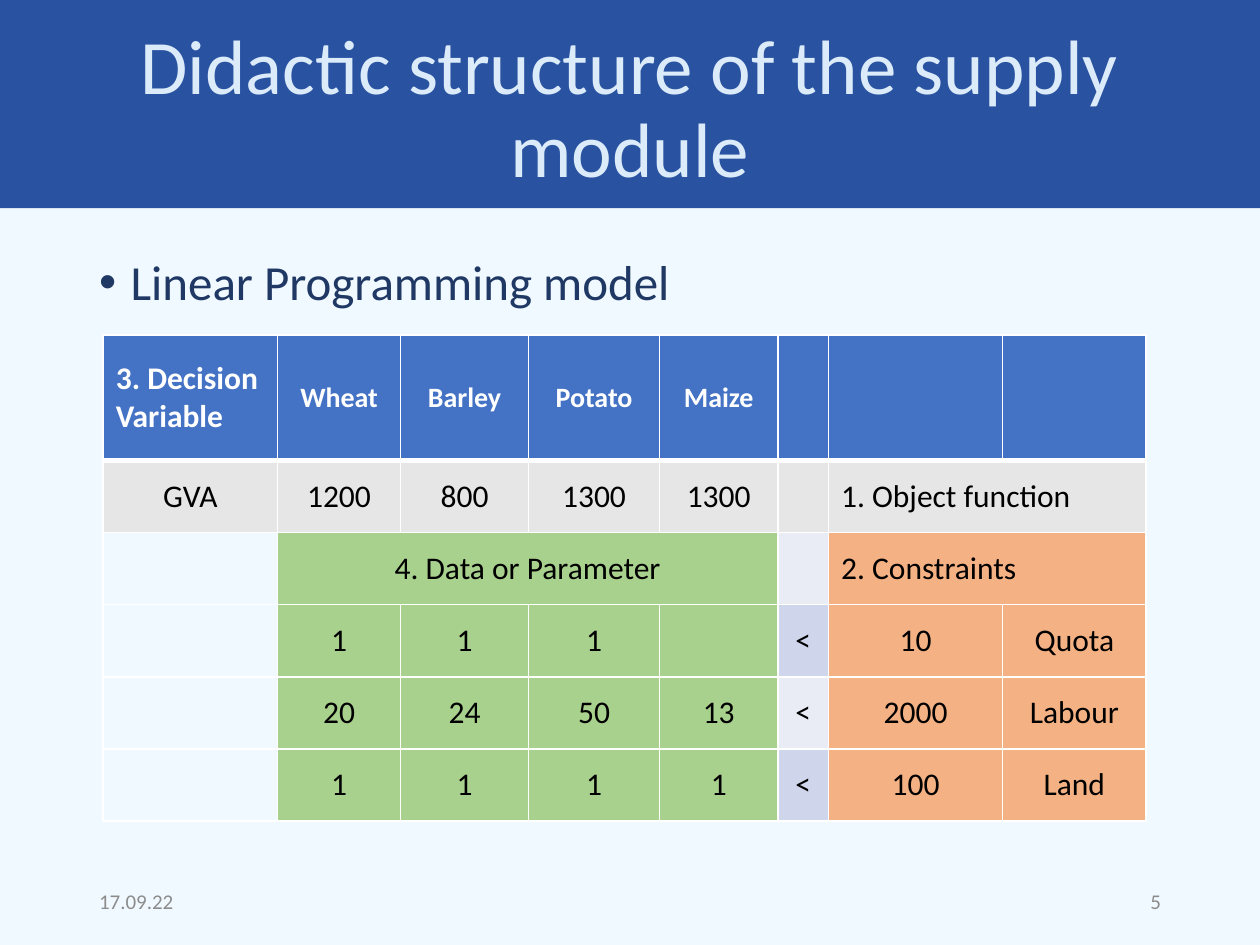
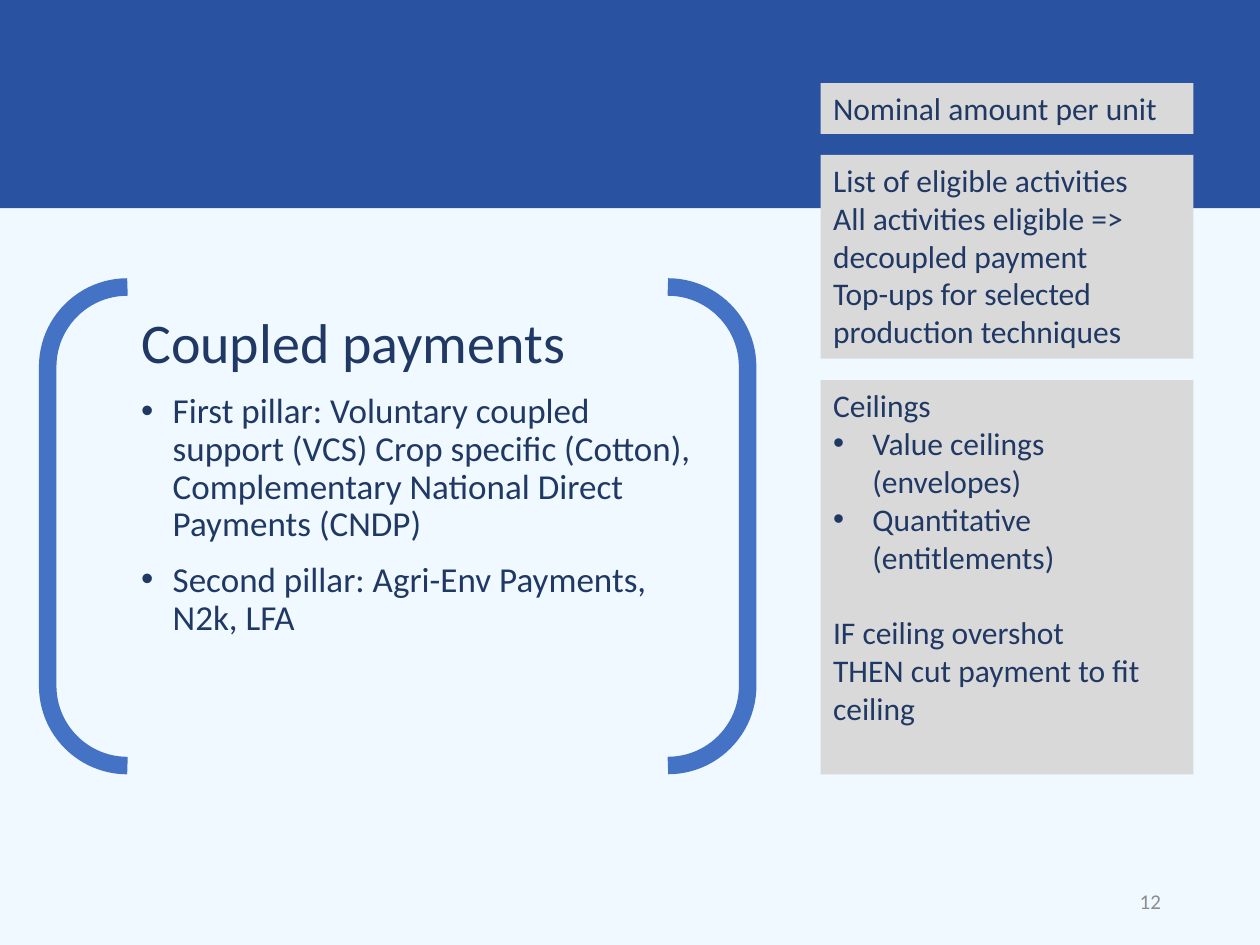
from dataclasses import dataclass
from typing import Any, Optional

import lxml.etree
import pptx
import pptx.dml.color
import pptx.enum.shapes
import pptx.enum.text
import pptx.oxml.ns
import pptx.util

Pt = pptx.util.Pt
RGBColor = pptx.dml.color.RGBColor
Align = pptx.enum.text.PP_ALIGN
Anchor = pptx.enum.text.MSO_ANCHOR
Preset = pptx.enum.shapes.MSO_SHAPE

FONT = "Calibri"
PAGE_COLOR = RGBColor(0xF0, 0xF9, 0xFF)
BAND_COLOR = RGBColor(0x29, 0x53, 0xA1)
TITLE_COLOR = RGBColor(0xDC, 0xEB, 0xFA)
TEXT_COLOR = RGBColor(0x20, 0x38, 0x64)
FOOTER_COLOR = RGBColor(0x8C, 0x8C, 0x8C)
BLUE = RGBColor(0x44, 0x72, 0xC4)
WHITE = RGBColor(0xFF, 0xFF, 0xFF)
BLACK = RGBColor(0x00, 0x00, 0x00)
PANEL_GRAY = RGBColor(0xD9, 0xD9, 0xD9)
ROW_GRAY = RGBColor(0xE7, 0xE6, 0xE6)
GREEN = RGBColor(0xA9, 0xD1, 0x8E)
ORANGE = RGBColor(0xF4, 0xB1, 0x83)
SIGN_COLORS = (RGBColor(0xE9, 0xEB, 0xF5), RGBColor(0xCF, 0xD5, 0xEA))

LIST_FORMAT = {"line_spacing": 0.9, "space_before": Pt(10)}


@dataclass(frozen=True)
class Box:
    left: float
    top: float
    width: float
    height: float

    def lengths(self) -> tuple:
        return tuple(Pt(side) for side in (self.left, self.top, self.width, self.height))


@dataclass(frozen=True)
class Line:
    text: str
    size: float = 18
    color: RGBColor = TEXT_COLOR
    bold: bool = False
    indent: float = 0
    layout: Optional[dict] = None


@dataclass(frozen=True)
class Panel:
    box: Box
    lines: tuple


BAND_BOX = Box(0, 0, 720, 119)
TITLE_BOX = Box(49.5, 11, 621, 104.5)
BODY_BOX = Box(49.5, 144, 621, 342.5)
DATE_BOX = Box(49.5, 500.5, 162, 29)
NUMBER_BOX = Box(508.5, 500.5, 162, 29)
PAYMENTS_BOX = Box(73.5, 176.5, 330, 236)
BRACKET_BOX = Box(27.25, 164, 400, 273.5)

TABLE_LEFT, TABLE_TOP = 59, 191.5
COLUMN_WIDTHS = (99.5, 70.5, 73, 75, 67.5, 29, 99.5, 82)
ROW_HEIGHTS = (71.5,) + (41.25,) * 5
MODEL_ROWS = (
    ("3. Decision Variable", "Wheat", "Barley", "Potato", "Maize", "", "", ""),
    ("GVA", "1200", "800", "1300", "1300", "", "1. Object function", ""),
    ("", "4. Data or Parameter", "", "", "", "", "2. Constraints", ""),
    ("", "1", "1", "1", "", "<", "10", "Quota"),
    ("", "20", "24", "50", "13", "<", "2000", "Labour"),
    ("", "1", "1", "1", "1", "<", "100", "Land"),
)
MERGES = (((1, 6), (1, 7)), ((2, 1), (2, 4)), ((2, 6), (2, 7)))
LEFT_LABELS = {(0, 0), (1, 6), (2, 6)}

PANELS = (
    Panel(Box(469, 88.5, 213, 116.5), (
        Line("List of eligible activities"),
        Line("All activities eligible => decoupled payment"),
        Line("Top-ups for selected production techniques"),
    )),
    Panel(Box(469, 47.5, 213, 29), (Line("Nominal amount per unit"),)),
    Panel(Box(469, 217.25, 213, 225.25), (
        Line("Ceilings"),
        Line("Value ceilings (envelopes)", indent=22.5),
        Line("Quantitative (entitlements)", indent=22.5),
        Line("IF ceiling overshot", layout={"space_before": Pt(21.6)}),
        Line("THEN cut payment to fit ceiling"),
    )),
)


def apply_format(target: Any, values: dict) -> None:
    for name, value in values.items():
        setattr(target, name, value)


def place(shape: Any, box: Box) -> None:
    apply_format(shape, dict(zip(("left", "top", "width", "height"), box.lengths())))


def set_bullet(para: Any, indent: float) -> None:
    properties = para._p.get_or_add_pPr()
    properties.set("marL", str(Pt(indent)))
    properties.set("indent", str(-Pt(indent)))
    qualified = pptx.oxml.ns.qn
    if indent:
        lxml.etree.SubElement(properties, qualified("a:buFont"), typeface="Arial")
        lxml.etree.SubElement(properties, qualified("a:buChar"), char="•")
    else:
        lxml.etree.SubElement(properties, qualified("a:buNone"))


def write_lines(frame: Any, lines: tuple, align: Any = Align.LEFT) -> None:
    for index, line in enumerate(lines):
        para = frame.add_paragraph() if index else frame.paragraphs[0]
        apply_format(para, {"alignment": align, **(line.layout or {})})
        set_bullet(para, line.indent)
        span = para.add_run()
        span.text = line.text
        apply_format(span.font, {"name": FONT, "size": Pt(line.size), "bold": line.bold})
        span.font.color.rgb = line.color


def fill_frame(shape: Any, lines: tuple, anchor: Any, align: Any = Align.LEFT) -> None:
    apply_format(shape.text_frame, {
        "word_wrap": True,
        "auto_size": pptx.enum.text.MSO_AUTO_SIZE.NONE,
        "vertical_anchor": anchor,
    })
    write_lines(shape.text_frame, lines, align)


def add_preset(page: Any, preset: Any, box: Box, fill: Optional[RGBColor]) -> Any:
    shape = page.shapes.add_shape(preset, *box.lengths())
    shape.shadow.inherit = False
    if fill is None:
        shape.fill.background()
    else:
        shape.fill.solid()
        shape.fill.fore_color.rgb = fill
        shape.line.fill.background()
    return shape


def add_footer(page: Any, box: Box, text: str, align: Any) -> None:
    footer = page.shapes.add_textbox(*box.lengths())
    fill_frame(footer, (Line(text, 12, FOOTER_COLOR),), Anchor.MIDDLE, align)


def add_page(deck: Any, number: int, body_box: Box, body_lines: tuple) -> Any:
    page = deck.slides.add_slide(deck.slide_layouts[1])
    band = add_preset(page, Preset.RECTANGLE, BAND_BOX, BAND_COLOR).element
    band.getparent().insert(2, band)
    body = page.placeholders[1]
    place(body, body_box)
    fill_frame(body, body_lines, Anchor.TOP)
    add_footer(page, NUMBER_BOX, str(number), Align.RIGHT)
    return page


def cell_color(row: int, column: int) -> Optional[RGBColor]:
    if row == 0:
        return BLUE
    if row == 1:
        return ROW_GRAY
    if column == 0:
        return None
    if column == 5:
        return SIGN_COLORS[row % 2]
    return GREEN if column < 5 else ORANGE


def set_borders(cell: Any, row: int) -> None:
    widths = {"lnL": 1, "lnR": 1, "lnT": 3 if row == 1 else 1, "lnB": 3 if row == 0 else 1}
    qualified = pptx.oxml.ns.qn
    properties = cell._tc.get_or_add_tcPr()
    for index, (side, width) in enumerate(widths.items()):
        border = lxml.etree.Element(qualified(f"a:{side}"), w=str(Pt(width)))
        fill = lxml.etree.SubElement(border, qualified("a:solidFill"))
        lxml.etree.SubElement(fill, qualified("a:srgbClr"), val=str(WHITE))
        properties.insert(index, border)


def format_cell(cell: Any, row: int, column: int, text: str) -> None:
    color = cell_color(row, column)
    if color is None:
        cell.fill.background()
    else:
        cell.fill.solid()
        cell.fill.fore_color.rgb = color
    set_borders(cell, row)
    cell.vertical_anchor = Anchor.MIDDLE
    if text:
        header = row == 0
        size = 16 if header and column else 18
        align = Align.LEFT if (row, column) in LEFT_LABELS else Align.CENTER
        line = Line(text, size, WHITE if header else BLACK, header)
        write_lines(cell.text_frame, (line,), align)


def add_model_table(page: Any) -> None:
    box = Box(TABLE_LEFT, TABLE_TOP, sum(COLUMN_WIDTHS), sum(ROW_HEIGHTS))
    table = page.shapes.add_table(len(ROW_HEIGHTS), len(COLUMN_WIDTHS), *box.lengths()).table
    for column, width in zip(table.columns, COLUMN_WIDTHS):
        column.width = Pt(width)
    for row, height in zip(table.rows, ROW_HEIGHTS):
        row.height = Pt(height)
    for first, last in MERGES:
        table.cell(*first).merge(table.cell(*last))
    for row, texts in enumerate(MODEL_ROWS):
        for column, text in enumerate(texts):
            format_cell(table.cell(row, column), row, column, text)


def build_model_page(deck: Any) -> None:
    heading = Line("Linear Programming model", 28, indent=18, layout=LIST_FORMAT)
    page = add_page(deck, 5, BODY_BOX, (heading,))
    title = page.shapes.title
    place(title, TITLE_BOX)
    line = Line("Didactic structure of the supply module", 44, TITLE_COLOR,
                layout={"line_spacing": 0.9})
    fill_frame(title, (line,), Anchor.MIDDLE, Align.CENTER)
    add_footer(page, DATE_BOX, "17.09.22", Align.LEFT)
    add_model_table(page)


def build_payments_page(deck: Any) -> None:
    page = add_page(deck, 12, PAYMENTS_BOX, (
        Line("Coupled payments", 32, layout=LIST_FORMAT),
        Line("First pillar: Voluntary coupled support (VCS) Crop specific (Cotton), "
             "Complementary National Direct Payments (CNDP)", 20, indent=18, layout=LIST_FORMAT),
        Line("Second pillar: Agri-Env Payments, N2k, LFA", 20, indent=18, layout=LIST_FORMAT),
    ))
    title = page.shapes.title.element
    title.getparent().remove(title)
    bracket = add_preset(page, Preset.DOUBLE_BRACKET, BRACKET_BOX, None)
    bracket.line.color.rgb = BLUE
    bracket.line.width = Pt(10)
    for panel in PANELS:
        shape = add_preset(page, Preset.RECTANGLE, panel.box, PANEL_GRAY)
        fill_frame(shape, panel.lines, Anchor.TOP)


def main() -> None:
    deck = pptx.Presentation()
    deck.slide_width, deck.slide_height = Pt(720), Pt(540)
    background = deck.slide_master.background.fill
    background.solid()
    background.fore_color.rgb = PAGE_COLOR
    build_model_page(deck)
    build_payments_page(deck)
    deck.save("out.pptx")


if __name__ == "__main__":
    main()
